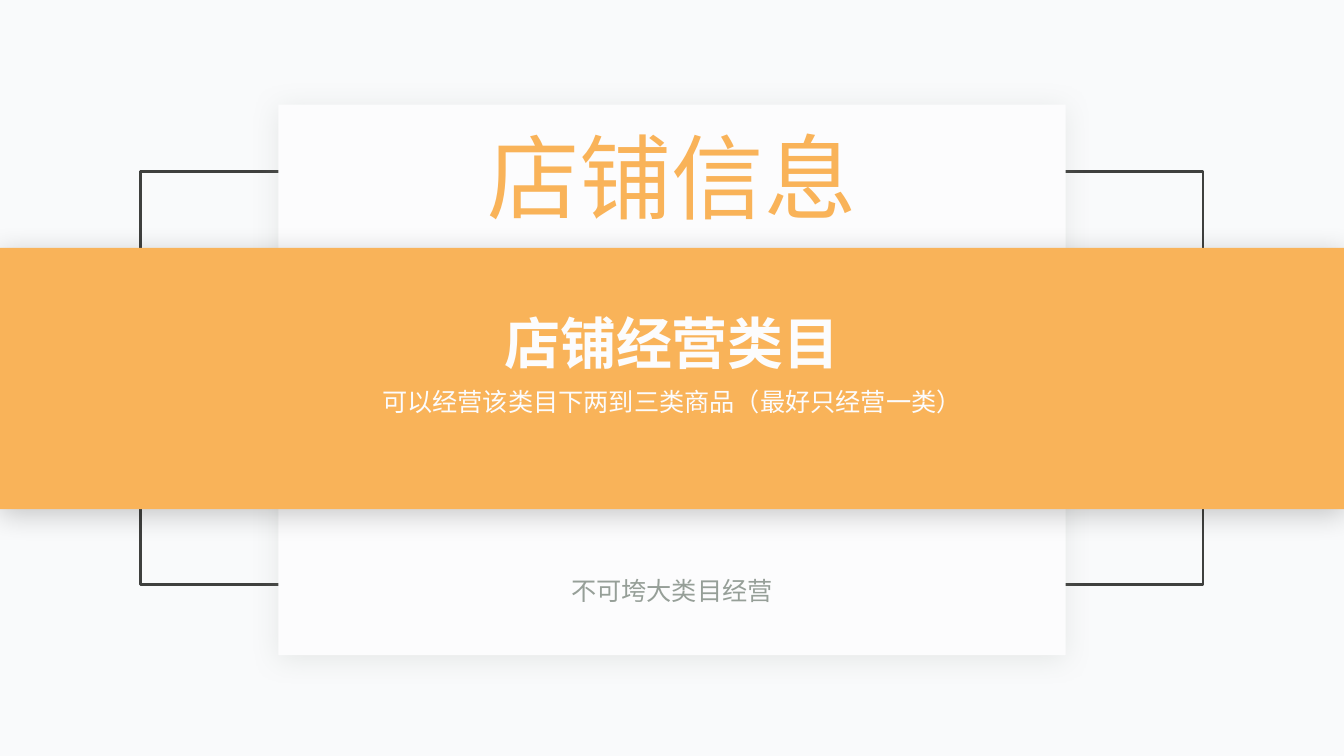
from dataclasses import dataclass

from lxml import etree
from pptx import Presentation
from pptx.dml.color import RGBColor
from pptx.enum import shapes, text
from pptx.oxml import ns
from pptx.util import Cm, Pt

SLIDE_W, SLIDE_H = 33.87, 19.05
FONT = "Noto Sans CJK SC"
ORANGE, WHITE, GREY, DARK, BACK = "F9B359", "FCFCFD", "969F98", "3F403E", "F9FAFB"


@dataclass
class Panel:
    top: float
    width: float
    height: float
    fill: str | None = None
    line: str | None = None
    shadow: str | None = None


@dataclass
class Label:
    words: str
    top: float
    width: float
    height: float
    size: int
    color: str
    bold: bool = False
    wrap: bool = False


PANELS = [
    Panel(4.32, 26.77, 10.41, line=DARK),
    Panel(2.64, 19.84, 13.87, fill=WHITE, shadow=GREY),
    Panel(6.25, SLIDE_W, 6.58, fill=ORANGE, shadow="000000"),
]
TITLE = Label("店铺信息", 2.9, 9.83, 3.07, 66, ORANGE)
LABELS = [
    Label("店铺经营类目", 7.65, 8.97, 1.96, 40, WHITE, bold=True),
    Label("可以经营该类目下两到三类商品（最好只经营一类）", 9.6, 16.05, 1.02, 18, WHITE, wrap=True),
    Label("不可垮大类目经营", 14.38, 5.59, 1.02, 18, GREY),
]


def rgb(color: str) -> RGBColor:
    return RGBColor.from_string(color)


def centred(item: Panel | Label) -> tuple[Cm, Cm, Cm, Cm]:
    """Left, top, width and height of an item centred across the slide."""
    return Cm((SLIDE_W - item.width) / 2), Cm(item.top), Cm(item.width), Cm(item.height)


def add_soft_shadow(sp, color: str) -> None:
    effects = sp._element.spPr.find(ns.qn("a:effectLst"))
    outer = etree.SubElement(effects, ns.qn("a:outerShdw"), blurRad=str(Pt(20)),
                             dist=str(Pt(3)), dir="5400000", algn="t", rotWithShape="0")
    clr = etree.SubElement(outer, ns.qn("a:srgbClr"), val=color)
    etree.SubElement(clr, ns.qn("a:alpha"), val="20000")


def add_panel(s, panel: Panel) -> None:
    sp = s.shapes.add_shape(shapes.MSO_SHAPE.RECTANGLE, *centred(panel))
    sp.shadow.inherit = False
    if panel.fill:
        sp.fill.solid()
        sp.fill.fore_color.rgb = rgb(panel.fill)
    else:
        sp.fill.background()
    if panel.line:
        sp.line.color.rgb = rgb(panel.line)
        sp.line.width = Pt(2)
    else:
        sp.line.fill.background()
    if panel.shadow:
        add_soft_shadow(sp, panel.shadow)


def write_label(sp, label: Label) -> None:
    sp.left, sp.top, sp.width, sp.height = centred(label)
    tf = sp.text_frame
    tf.text = label.words
    tf.word_wrap = label.wrap
    tf.auto_size = text.MSO_AUTO_SIZE.SHAPE_TO_FIT_TEXT
    tf.vertical_anchor = text.MSO_ANCHOR.TOP
    p = tf.paragraphs[0]
    p.alignment = text.PP_ALIGN.CENTER
    p.font.size = Pt(label.size)
    p.font.bold = label.bold
    p.font.color.rgb = rgb(label.color)
    p.font.name = FONT
    etree.SubElement(p.font._element, ns.qn("a:ea"), typeface=FONT)


def main() -> None:
    prs = Presentation()
    prs.slide_width, prs.slide_height = Cm(SLIDE_W), Cm(SLIDE_H)
    s = prs.slides.add_slide(prs.slide_layouts.get_by_name("Title Only"))
    s.background.fill.solid()
    s.background.fill.fore_color.rgb = rgb(BACK)

    for panel in PANELS:
        add_panel(s, panel)

    title = s.shapes.title
    title._element.getparent().append(title._element)  # bring in front of the panels
    write_label(title, TITLE)
    for label in LABELS:
        write_label(s.shapes.add_textbox(*centred(label)), label)

    prs.save("out.pptx")


if __name__ == "__main__":
    main()
